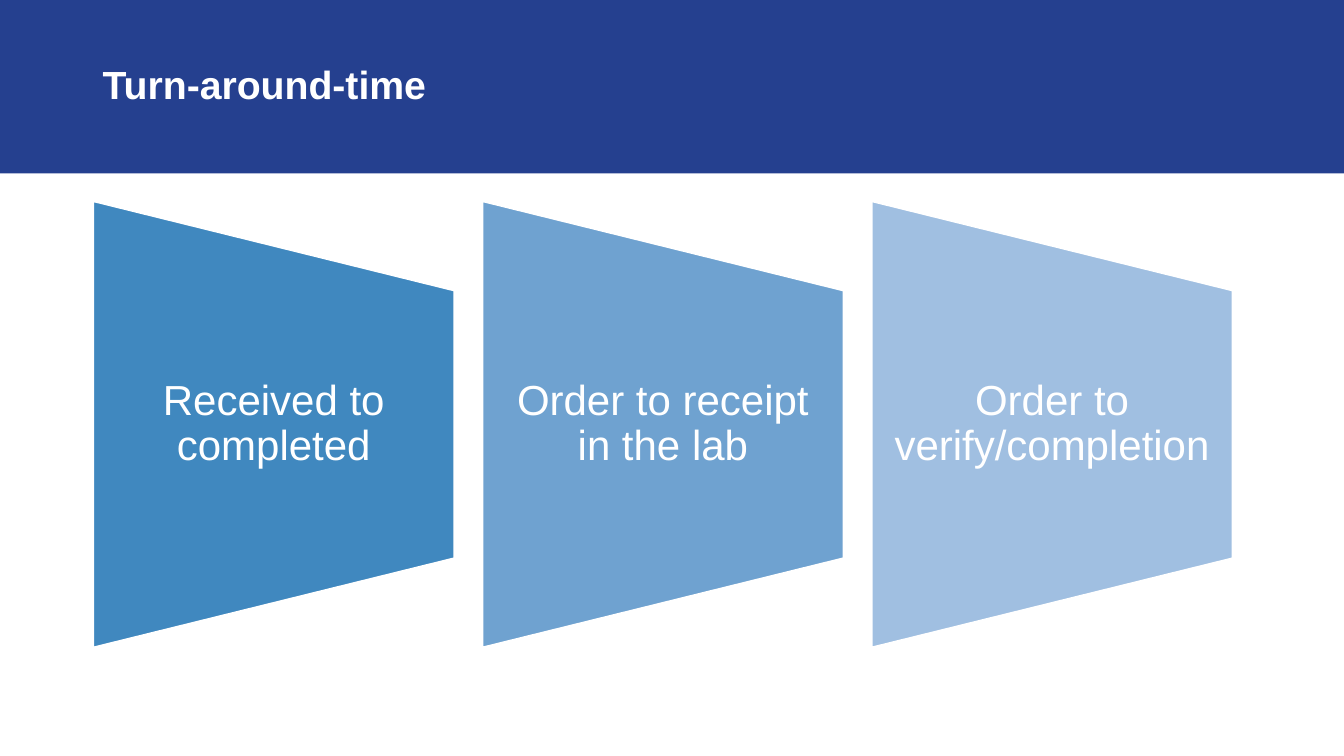
from pptx import Presentation
from pptx.dml.color import RGBColor
from pptx.enum.shapes import MSO_SHAPE as Shape
from pptx.enum.text import MSO_ANCHOR as Anchor, PP_ALIGN as Align
from pptx.util import Inches, Pt

WHITE = RGBColor(0xFF, 0xFF, 0xFF)
NAVY = RGBColor(0x25, 0x40, 0x8F)
STAGES = [
    ("Received to completed", RGBColor(0x40, 0x88, 0xBF)),
    ("Order to receipt in the lab", RGBColor(0x6F, 0xA2, 0xD0)),
    ("Order to verify/completion", RGBColor(0xA0, 0xBF, 0xE1)),
]
STAGE_LEFT, STAGE_PITCH = 0.92, 3.86
STAGE_WIDTH, STAGE_HEIGHT = 3.59, 4.44
STAGE_MIDDLE = 4.21
LABEL_HEIGHT = 2.66


def add_filled_shape(slide, kind, left, top, width, height, color):
    """Add a borderless, shadowless preset shape in one colour."""
    shape = slide.shapes.add_shape(
        kind, Inches(left), Inches(top), Inches(width), Inches(height))
    shape.shadow.inherit = False
    shape.fill.solid()
    shape.fill.fore_color.rgb = color
    shape.line.fill.background()
    return shape


def add_label(slide, text, left, top, width, height, size,
              side_inset=0.1, end_inset=0.05, align=Align.LEFT, bold=False):
    """Add a wrapped, vertically centred white text box."""
    box = slide.shapes.add_textbox(
        Inches(left), Inches(top), Inches(width), Inches(height))
    frame = box.text_frame
    frame.word_wrap = True
    frame.vertical_anchor = Anchor.MIDDLE
    frame.margin_left = frame.margin_right = Inches(side_inset)
    frame.margin_top = frame.margin_bottom = Inches(end_inset)
    paragraph = frame.paragraphs[0]
    paragraph.alignment = align
    paragraph.line_spacing = 0.9
    run = paragraph.add_run()
    run.text = text
    run.font.name = "Arial"
    run.font.size = Pt(size)
    run.font.bold = bold
    run.font.color.rgb = WHITE


def add_stage(slide, left, text, color):
    """Add a sideways trapezoid with its upright label."""
    trapezoid = add_filled_shape(
        slide, Shape.FLOWCHART_MANUAL_OPERATION,
        left + (STAGE_WIDTH - STAGE_HEIGHT) / 2, STAGE_MIDDLE - STAGE_WIDTH / 2,
        STAGE_HEIGHT, STAGE_WIDTH, color)
    trapezoid.rotation = 270
    trapezoid.line.color.rgb = WHITE
    trapezoid.line.width = Pt(2)
    add_label(slide, text, left, STAGE_MIDDLE - LABEL_HEIGHT / 2, STAGE_WIDTH,
              LABEL_HEIGHT, 30, side_inset=0.21, end_inset=0, align=Align.CENTER)


def main():
    """Build the turn-around-time slide."""
    presentation = Presentation()
    presentation.slide_width = Inches(13.33)
    presentation.slide_height = Inches(7.5)
    slide = presentation.slides.add_slide(presentation.slide_layouts[6])
    add_filled_shape(slide, Shape.RECTANGLE, 0, 0, 13.33, 1.72, NAVY)
    add_label(slide, "Turn-around-time", 0.92, 0.22, 11.31, 1.28, 28, bold=True)
    for index, (text, color) in enumerate(STAGES):
        add_stage(slide, STAGE_LEFT + index * STAGE_PITCH, text, color)
    presentation.save("out.pptx")


if __name__ == "__main__":
    main()
